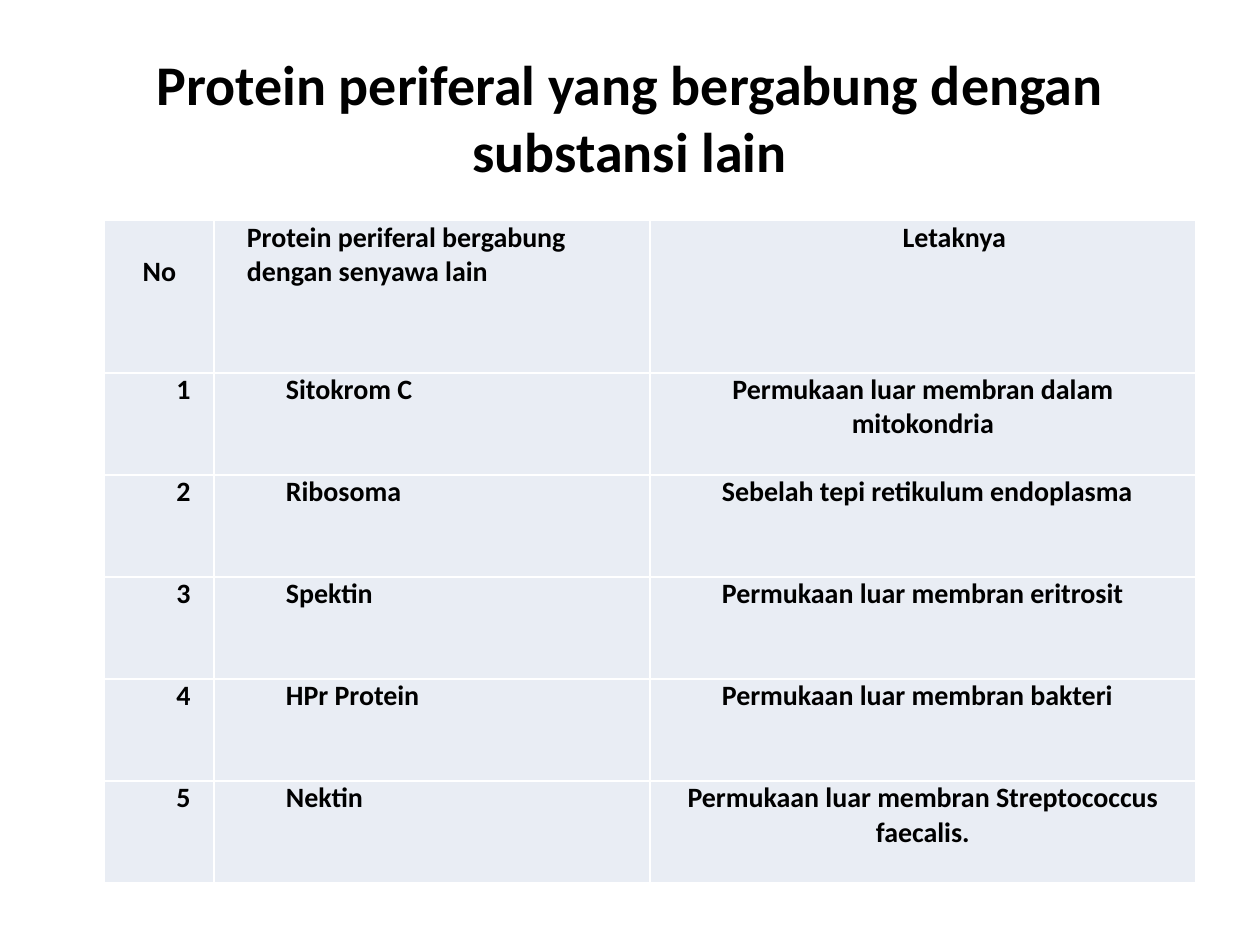
from lxml import etree
from pptx import Presentation
from pptx.dml.color import RGBColor
from pptx.enum.text import MSO_ANCHOR, PP_ALIGN
from pptx.oxml.ns import qn
from pptx.util import Inches, Pt

CENTER, LEFT, JUSTIFY = PP_ALIGN.CENTER, PP_ALIGN.LEFT, PP_ALIGN.JUSTIFY
MIDDLE = MSO_ANCHOR.MIDDLE

FONT, INK, CELL_FILL, BORDER = "Calibri", "000000", "E9EDF4", "FFFFFF"
INDENT = 0.5

TITLE = "Protein periferal yang bergabung dengan substansi lain"
# Each cell: text, alignment, left margin, first-line indent
HEADER = [
    (" No", CENTER, 0, INDENT),
    ("Protein periferal bergabung dengan senyawa lain", LEFT, 0.19, 0),
    ("Letaknya", CENTER, 0, INDENT),
]
# Protein, location, and whether the location is centred
PROTEINS = [
    ("Sitokrom C", "Permukaan luar membran dalam mitokondria", True),
    ("Ribosoma", "Sebelah tepi retikulum endoplasma", False),
    ("Spektin", "Permukaan luar membran eritrosit", False),
    ("HPr Protein", "Permukaan luar membran bakteri", False),
    ("Nektin", "Permukaan luar membran Streptococcus faecalis.", True),
]
COLUMN_WIDTHS = [0.87, 3.46, 4.33]
HEADER_HEIGHT, ROW_HEIGHT = 1.21, 0.81


def color(value):
    return RGBColor.from_string(value)


def write(text_frame, text, size, alignment):
    paragraph = text_frame.paragraphs[0]
    paragraph.text = text
    paragraph.alignment = alignment
    font = paragraph.font
    font.name, font.size, font.bold = FONT, Pt(size), True
    font.color.rgb = color(INK)
    return paragraph


def add_borders(cell):
    properties = cell._tc.get_or_add_tcPr()
    for position, side in enumerate(("a:lnL", "a:lnR", "a:lnT", "a:lnB")):
        line = etree.Element(qn(side), w=str(Pt(1)))
        fill = etree.SubElement(line, qn("a:solidFill"))
        etree.SubElement(fill, qn("a:srgbClr"), val=BORDER)
        properties.insert(position, line)


def fill_cell(cell, text, alignment, margin, indent):
    cell.margin_left = cell.margin_right = Inches(0.07)
    cell.margin_top = cell.margin_bottom = 0
    cell.fill.solid()
    cell.fill.fore_color.rgb = color(CELL_FILL)
    add_borders(cell)
    paragraph = write(cell.text_frame, text, 16, alignment)
    properties = paragraph._p.get_or_add_pPr()
    properties.set("marL", str(Inches(margin)))
    properties.set("indent", str(Inches(indent)))


def protein_row(number, protein, location, centred):
    place = (location, CENTER, 0, 0) if centred else (location, JUSTIFY, 0, INDENT)
    return [(str(number), JUSTIFY, 0, INDENT), (protein, LEFT, 0, INDENT), place]


def main():
    presentation = Presentation()
    presentation.slide_width, presentation.slide_height = Inches(10), Inches(7.5)
    slide = presentation.slides.add_slide(presentation.slide_layouts[6])

    # Title
    title = slide.shapes.add_textbox(Inches(0.5), Inches(0.3), Inches(9), Inches(1.25))
    title.text_frame.word_wrap = True
    title.text_frame.vertical_anchor = MIDDLE
    write(title.text_frame, TITLE, 32, CENTER)

    # Protein table
    rows = [HEADER] + [protein_row(number, *protein)
                       for number, protein in enumerate(PROTEINS, 1)]
    heights = [HEADER_HEIGHT] + [ROW_HEIGHT] * len(PROTEINS)
    table = slide.shapes.add_table(
        len(rows), len(COLUMN_WIDTHS), Inches(0.83), Inches(1.75),
        Inches(sum(COLUMN_WIDTHS)), Inches(sum(heights))).table
    for column, width in zip(table.columns, COLUMN_WIDTHS):
        column.width = Inches(width)
    for table_row, height, contents in zip(table.rows, heights, rows):
        table_row.height = Inches(height)
        for cell, content in zip(table_row.cells, contents):
            fill_cell(cell, *content)

    presentation.save("out.pptx")


if __name__ == "__main__":
    main()
